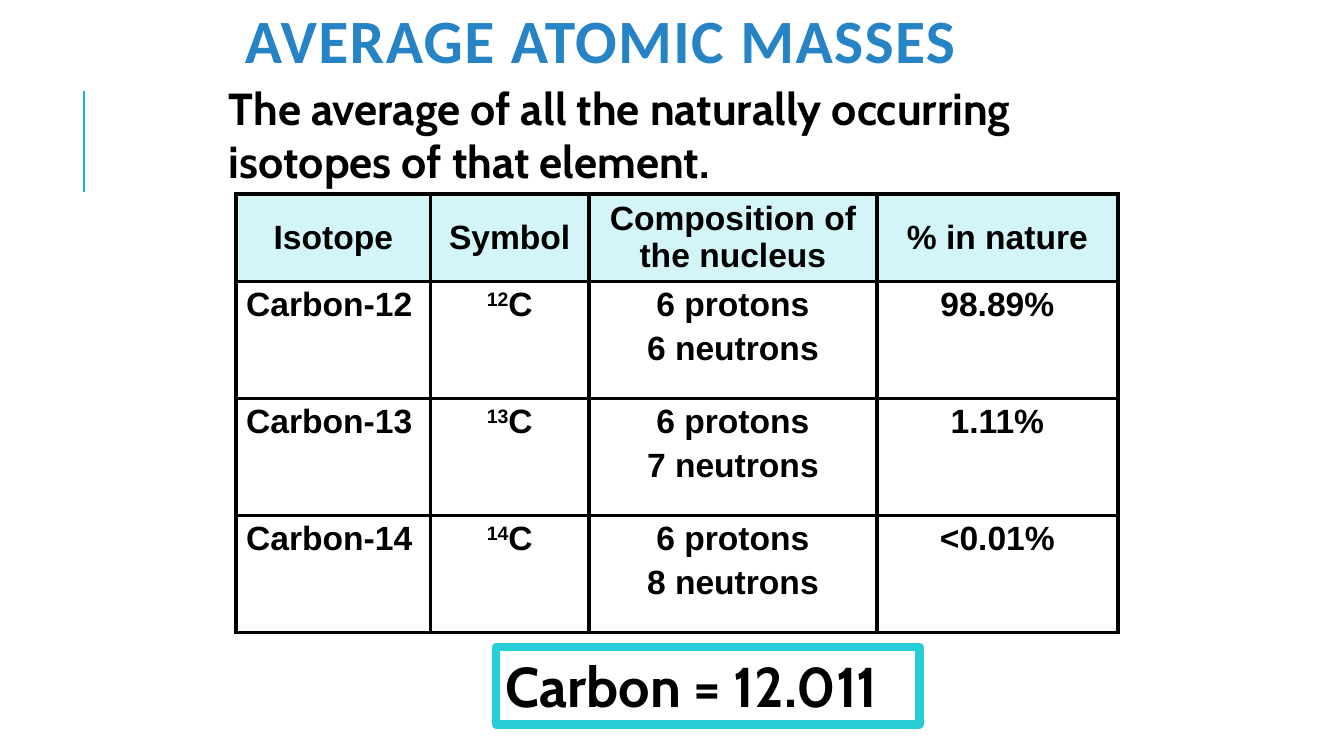
from lxml import etree
from pptx import Presentation, util as u
from pptx.dml.color import RGBColor
from pptx.enum import shapes as s, text as t
from pptx.oxml import ns

BLACK = RGBColor(0, 0, 0)
WHITE = RGBColor(255, 255, 255)
BLUE = RGBColor(0x26, 0x83, 0xC6)
SKY = RGBColor(0x1C, 0xAD, 0xE4)
AQUA = RGBColor(0x27, 0xCE, 0xD7)
PALE = RGBColor(0xD4, 0xF5, 0xF7)

HEADS = ["Isotope", "Symbol", "Composition of the nucleus", "% in nature"]
ISOTOPES = [(12, "98.89%"), (13, "1.11%"), (14, "<0.01%")]
WIDTHS = [4.9, 3.99, 7.26, 6.07]
HEAD_H, ROW_H = 2.21, 2.95


def box(*sizes):
    return [u.Cm(size) for size in sizes]


def style(para, name, size, color=BLACK):
    font = para.font
    font.name, font.size, font.bold = name, u.Pt(size), True
    font.color.rgb = color


def add_title(slide, area):
    title = slide.shapes.title
    title.left, title.top, title.width, title.height = area
    frame = title.text_frame
    frame.text = "AVERAGE ATOMIC MASSES"
    frame.auto_size = t.MSO_AUTO_SIZE.NONE
    frame.vertical_anchor = t.MSO_ANCHOR.MIDDLE
    para = frame.paragraphs[0]
    para.alignment = t.PP_ALIGN.LEFT
    para.line_spacing = 0.8
    style(para, "Calibri", 44, BLUE)
    para.runs[0].font._element.set("spc", "100")


def add_rule(slide, x, top, end):
    rule = slide.shapes.add_connector(s.MSO_CONNECTOR.STRAIGHT, x, end, x, top)
    rule.line.color.rgb = SKY
    rule.line.width = u.Pt(1.5)
    etree.SubElement(rule._element.spPr, ns.qn("a:effectLst"))


def add_intro(slide, area):
    frame = slide.shapes.add_textbox(*area).text_frame
    frame.word_wrap = True
    frame.text = "The average of all the naturally occurring isotopes of that element."
    style(frame.paragraphs[0], "Cabin", 32)


def set_border(cell):
    """Draw a 3 pt black line on all four sides, ahead of the cell's fill."""
    props = cell._tc.get_or_add_tcPr()
    for i, side in enumerate(("lnL", "lnR", "lnT", "lnB")):
        line = etree.Element(ns.qn("a:" + side), w=str(u.Pt(3)))
        fill = etree.SubElement(line, ns.qn("a:solidFill"))
        etree.SubElement(fill, ns.qn("a:srgbClr"), val=str(BLACK))
        props.insert(i, line)


def fill_cell(cell, words, fill, align=t.PP_ALIGN.CENTER):
    cell.fill.solid()
    cell.fill.fore_color.rgb = fill
    set_border(cell)
    cell.text = words
    for i, para in enumerate(cell.text_frame.paragraphs):
        para.alignment = align
        style(para, "Arial", 24)
        if i:
            para.space_before = u.Pt(4.4)


def add_isotopes(slide, left, top):
    rows = len(ISOTOPES) + 1
    area = box(sum(WIDTHS), HEAD_H + ROW_H * len(ISOTOPES))
    table = slide.shapes.add_table(rows, len(WIDTHS), left, top, *area).table
    for col, width in zip(table.columns, WIDTHS):
        col.width = u.Cm(width)
    for i, row in enumerate(table.rows):
        row.height = u.Cm(ROW_H if i else HEAD_H)
    for cell, head in zip(table.rows[0].cells, HEADS):
        fill_cell(cell, head, PALE)
        cell.vertical_anchor = t.MSO_ANCHOR.MIDDLE
    for i, (mass, share) in enumerate(ISOTOPES, 1):
        name, symbol, core, part = table.rows[i].cells
        fill_cell(name, f"Carbon-{mass}", WHITE, t.PP_ALIGN.LEFT)
        fill_cell(symbol, str(mass), WHITE)
        para = symbol.text_frame.paragraphs[0]
        para.runs[0].font._element.set("baseline", "30000")
        para.add_run().text = "C"
        fill_cell(core, f"6 protons\n{mass - 6} neutrons", WHITE)
        fill_cell(part, share, WHITE)


def add_result(slide, area):
    rect = slide.shapes.add_shape(s.MSO_SHAPE.RECTANGLE, *area)
    rect.shadow.inherit = False
    rect.fill.background()
    rect.line.color.rgb = AQUA
    rect.line.width = u.Pt(6)
    frame = rect.text_frame
    frame.word_wrap = True
    frame.vertical_anchor = t.MSO_ANCHOR.TOP
    frame.text = "Carbon = 12.011"
    para = frame.paragraphs[0]
    para.alignment = t.PP_ALIGN.LEFT
    style(para, "Cabin", 40)


def main():
    deck = Presentation()
    deck.slide_width, deck.slide_height = box(33.87, 19.05)
    slide = deck.slides.add_slide(deck.slide_layouts[5])
    add_rule(slide, *box(2.12, 2.3, 4.84))
    add_title(slide, box(5.92, 0.2, 21.8, 1.9))
    add_isotopes(slide, *box(5.95, 4.88))
    add_intro(slide, box(5.52, 1.9, 22.65, 3))
    add_result(slide, box(12.5, 16.3, 10.67, 1.96))
    deck.save("out.pptx")


if __name__ == "__main__":
    main()
